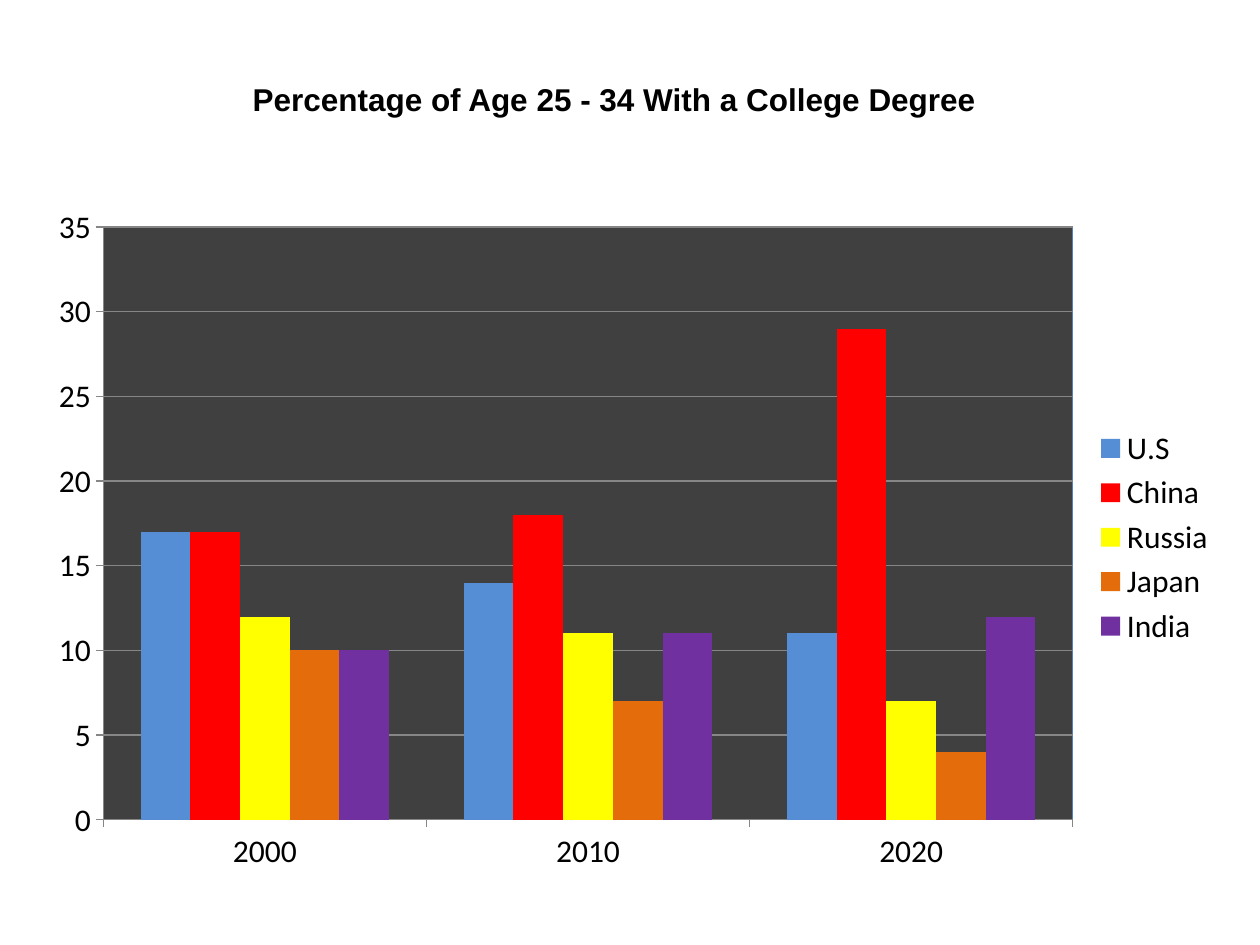
"""Build a slide comparing college degree shares of five countries."""
from lxml import etree
from pptx import Presentation
from pptx.chart.data import CategoryChartData
from pptx.dml.color import RGBColor
from pptx.enum import chart as charts, text
from pptx.oxml import parse_xml
from pptx.oxml.ns import qn
from pptx.util import Pt

TITLE = "Percentage of Age 25 - 34 With a College Degree"
YEARS = ["2000", "2010", "2020"]
DEGREES = {
    "U.S": (17, 14, 11),
    "China": (17, 18, 29),
    "Russia": (12, 11, 7),
    "Japan": (10, 7, 4),
    "India": (10, 11, 12),
}
COLORS = {
    "U.S": "558ED5", "China": "FF0000", "Russia": "FFFF00",
    "Japan": "E46C0A", "India": "7030A0",
    "text": "000000", "plot": "404040", "border": "4F81BD", "grid": "868686",
}
TITLE_BOX = (30, 42, 642, 29)
CHART_BOX = (18, 110, 684, 394)
PLOT_PART = {"x": 0.06, "y": 0.05, "w": 0.81, "h": 0.86}
CHART_NS = 'xmlns:c="http://schemas.openxmlformats.org/drawingml/2006/chart"'
DRAW_NS = 'xmlns:a="http://schemas.openxmlformats.org/drawingml/2006/main"'


def color(name):
    return RGBColor.from_string(COLORS[name])


def style_font(font, name):
    font.name, font.size = name, Pt(18)
    font.color.rgb = color("text")


def add_title(slide):
    shape = slide.shapes.title
    shape.left, shape.top, shape.width, shape.height = map(Pt, TITLE_BOX)
    frame = shape.text_frame
    frame.text = TITLE
    frame.word_wrap = True
    frame.auto_size = text.MSO_AUTO_SIZE.SHAPE_TO_FIT_TEXT
    frame.vertical_anchor = text.MSO_ANCHOR.TOP
    paragraph = frame.paragraphs[0]
    paragraph.alignment = text.PP_ALIGN.CENTER
    style_font(paragraph.font, "Arial")
    paragraph.font.bold = True


def format_plot_area(chart):
    area = chart._chartSpace.find(".//" + qn("c:plotArea"))
    for layout in area.findall(qn("c:layout")):
        area.remove(layout)
    layout = parse_xml(f"<c:layout {CHART_NS}><c:manualLayout/></c:layout>")
    settings = {"layoutTarget": "inner", "xMode": "edge", "yMode": "edge", **PLOT_PART}
    for tag, value in settings.items():
        etree.SubElement(layout[0], qn(f"c:{tag}")).set("val", str(value))
    area.insert(0, layout)
    area.append(parse_xml(
        f"<c:spPr {CHART_NS} {DRAW_NS}>"
        f'<a:solidFill><a:srgbClr val="{COLORS["plot"]}"/></a:solidFill>'
        f'<a:ln w="9525"><a:solidFill><a:srgbClr val="{COLORS["border"]}"/>'
        "</a:solidFill></a:ln></c:spPr>"))


def add_degree_chart(slide):
    data = CategoryChartData()
    data.categories = YEARS
    for country, values in DEGREES.items():
        data.add_series(country, values)
    chart = slide.shapes.add_chart(
        charts.XL_CHART_TYPE.COLUMN_CLUSTERED, *map(Pt, CHART_BOX), data).chart
    style_font(chart.font, "Calibri")
    chart.has_title = False
    chart.has_legend = True
    chart.legend.position = charts.XL_LEGEND_POSITION.RIGHT
    chart.legend.include_in_layout = False

    plot = chart.plots[0]
    plot.gap_width, plot.overlap = 150, 0
    plot.vary_by_categories = False
    for series in plot.series:
        series.format.fill.solid()
        series.format.fill.fore_color.rgb = color(series.name)

    for axis in (chart.category_axis, chart.value_axis):
        axis.major_tick_mark = charts.XL_TICK_MARK.OUTSIDE
        axis.format.line.color.rgb = color("grid")
    value_axis = chart.value_axis
    value_axis.minimum_scale, value_axis.maximum_scale = 0, 35
    value_axis.major_unit = 5
    value_axis.has_major_gridlines = True
    value_axis.major_gridlines.format.line.color.rgb = color("grid")
    format_plot_area(chart)


def main():
    presentation = Presentation()
    presentation.slide_width, presentation.slide_height = Pt(720), Pt(540)
    slide = presentation.slides.add_slide(presentation.slide_layouts[5])
    add_degree_chart(slide)
    add_title(slide)
    presentation.save("out.pptx")


if __name__ == "__main__":
    main()
